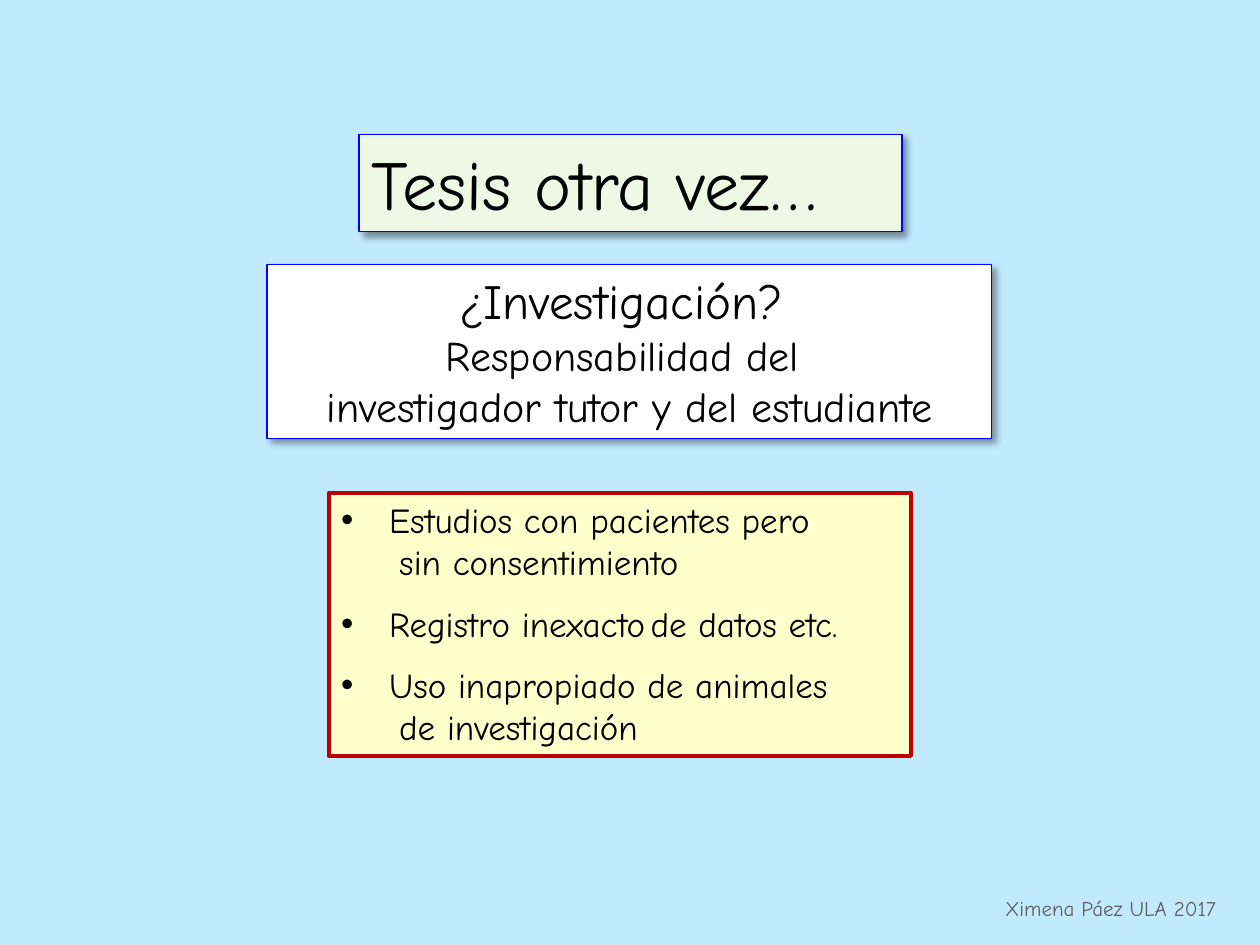
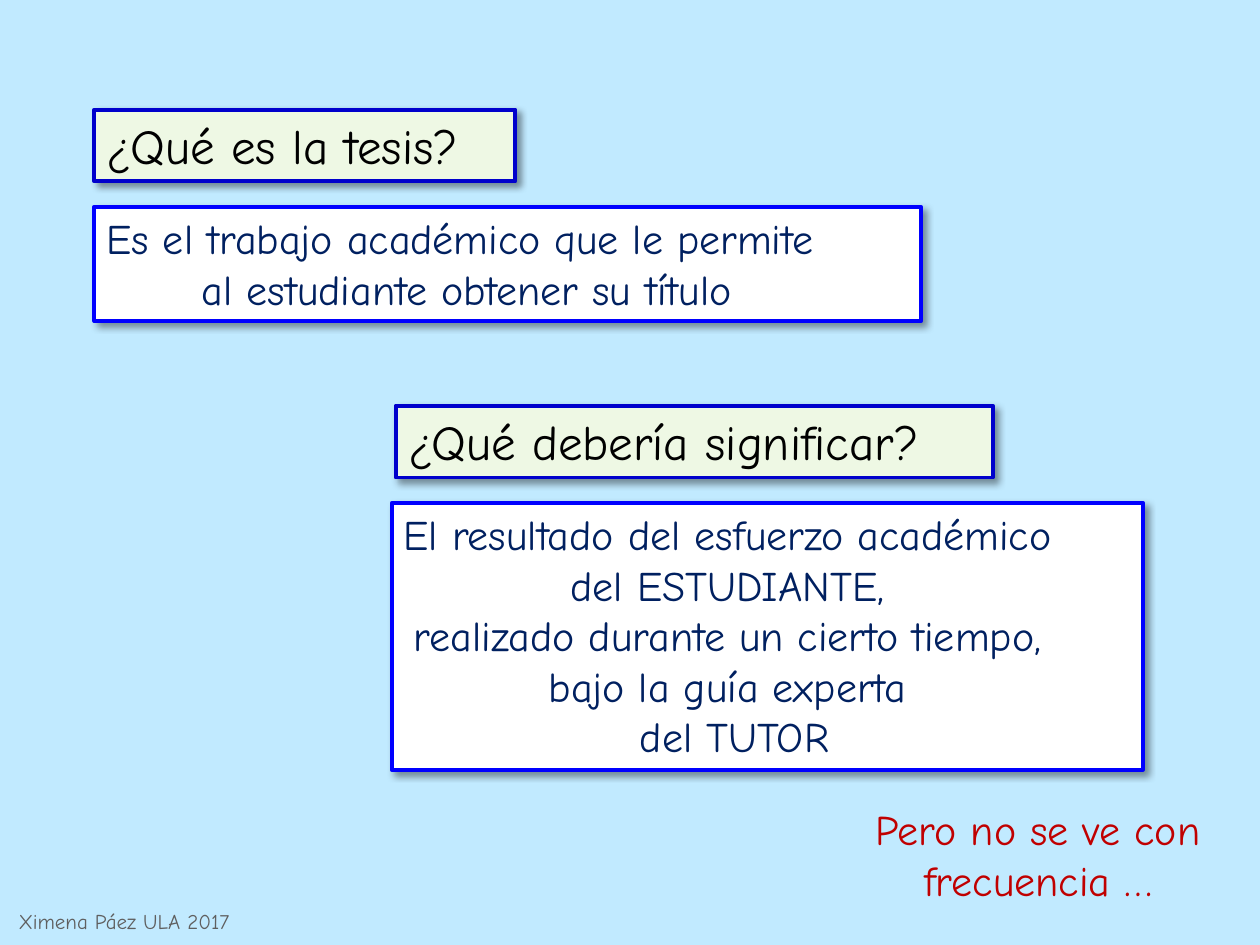
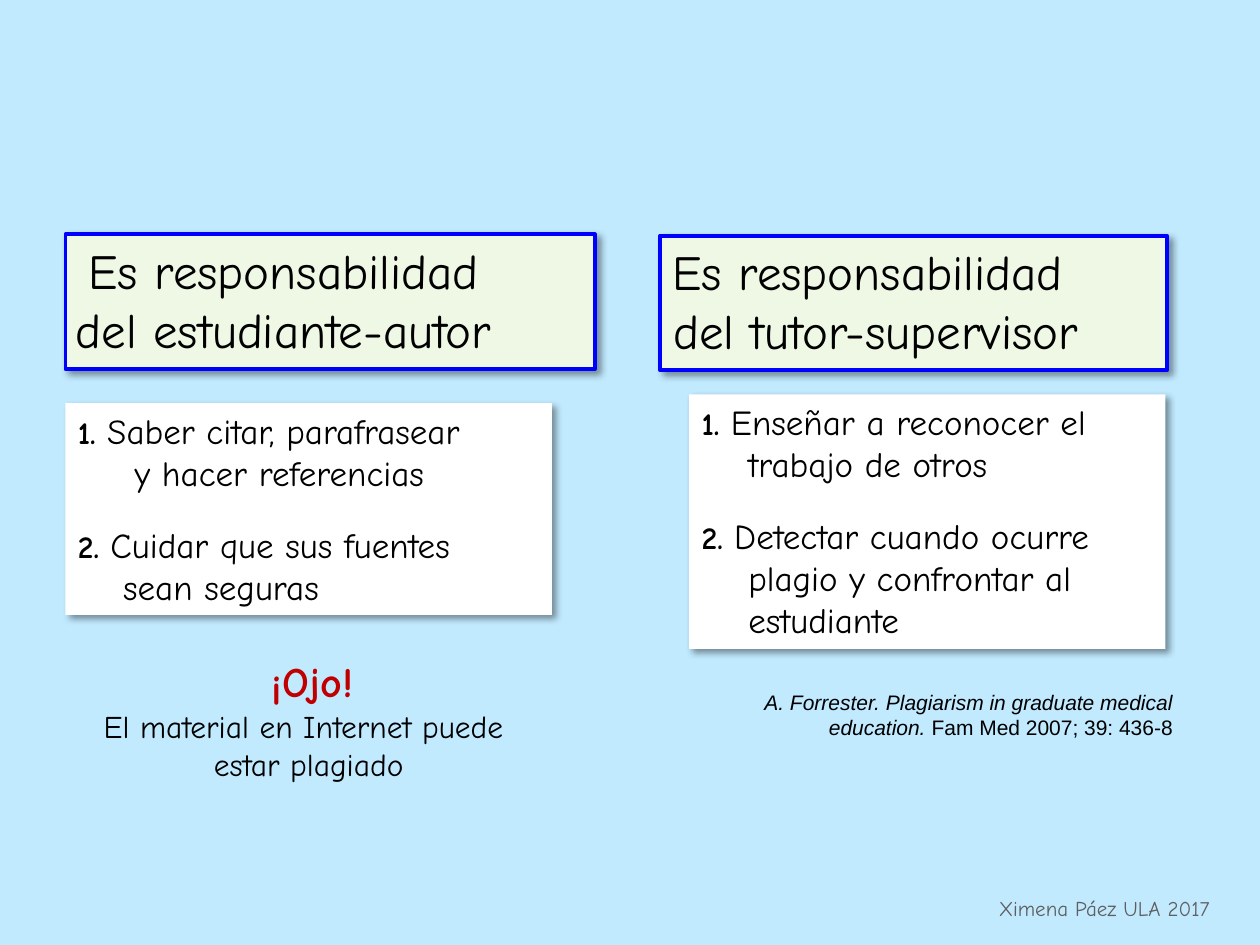
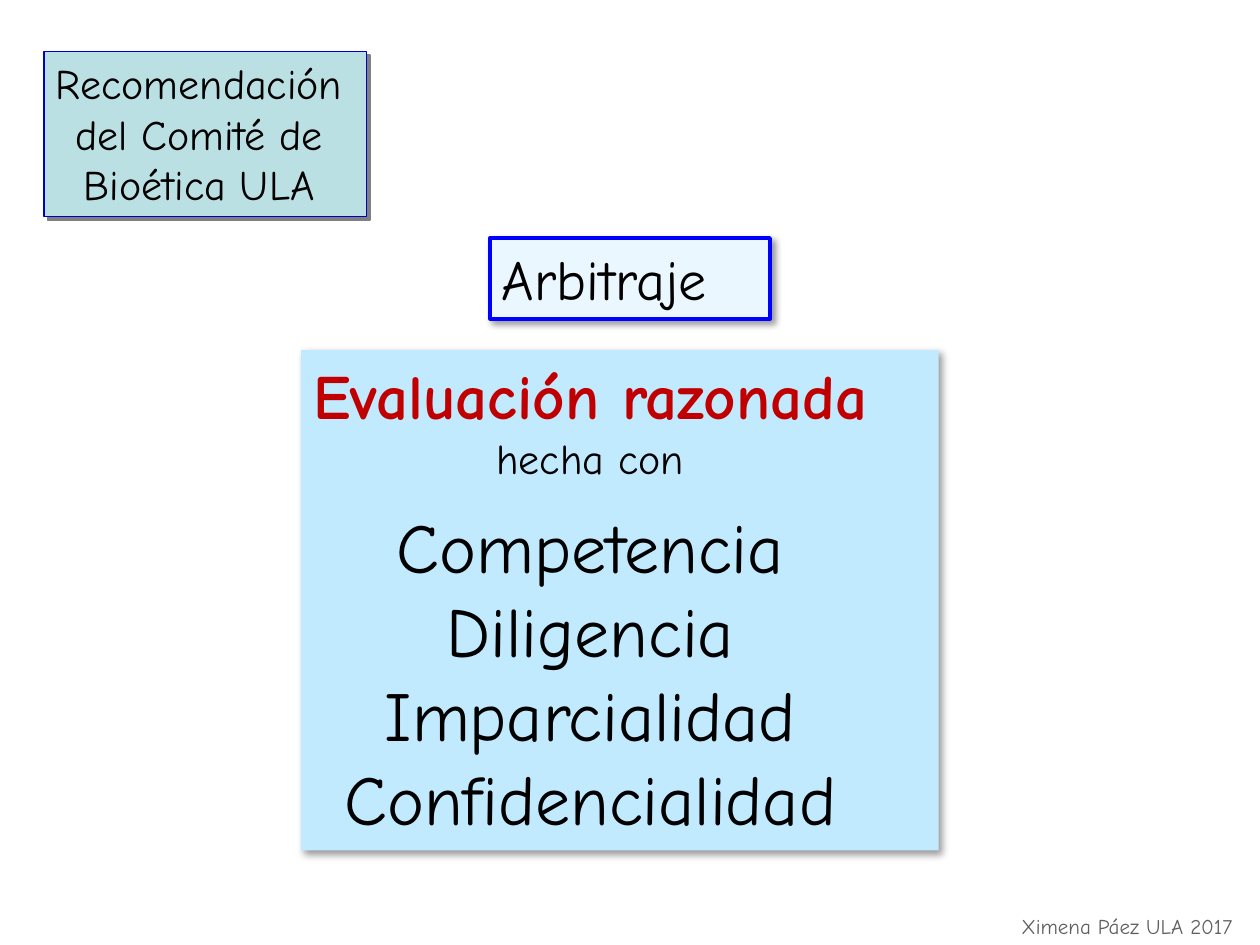
from dataclasses import dataclass

from lxml.etree import SubElement
from pptx import Presentation
from pptx.dml.color import RGBColor
from pptx.enum.shapes import MSO_SHAPE
from pptx.enum.text import MSO_ANCHOR, PP_ALIGN
from pptx.oxml.ns import qn
from pptx.util import Inches, Pt


@dataclass(frozen=True)
class Theme:
    font: str = "Comic Neue"
    citation_font: str = "Arial"
    sky: str = "C1EAFF"
    white: str = "FFFFFF"
    pale_green: str = "EEF8E4"
    pale_yellow: str = "FFFFCC"
    pale_blue: str = "EBF7FF"
    teal: str = "BBE0E3"
    blue: str = "0000FF"
    deep_blue: str = "0000CC"
    navy: str = "002060"
    red: str = "C00000"
    black: str = "000000"
    gray: str = "5F5F5F"
    thin: float = 0.75
    thick: float = 2.25
    footer_size: int = 12
    small: int = 18
    item: int = 20
    body: int = 24
    heading: int = 28
    label: int = 32
    emphasis: int = 36
    title: int = 40
    # colour, opacity %, blur pt, distance pt
    soft_shadow: tuple = ("000000", 40, 4, 3)
    hard_shadow: tuple = ("808080", 100, 0, 2.8)


THEME = Theme()
LEFT, CENTER, RIGHT = PP_ALIGN.LEFT, PP_ALIGN.CENTER, PP_ALIGN.RIGHT
INSET = 0.1
SLACK = 0.05


@dataclass
class Span:
    text: str
    size: float = THEME.body
    color: str = THEME.black
    bold: bool = False
    italic: bool = False
    font: str = THEME.font


@dataclass
class Para:
    spans: list
    indent: float = 0
    before: float = 0
    bullet: bool = False


def add_box(page, at, paras, align=CENTER, fill=None, line=None,
            weight=THEME.thick, shadow=THEME.soft_shadow, text_width=None):
    """Add a text box, or a rectangle when a fill is given.

    text_width limits the text to a column that starts at the left inset.
    """
    place = [Inches(length) for length in at]
    if fill:
        box = page.shapes.add_shape(MSO_SHAPE.RECTANGLE, *place)
        box.fill.solid()
        box.fill.fore_color.rgb = RGBColor.from_string(fill)
        if line:
            box.line.color.rgb = RGBColor.from_string(line)
            box.line.width = Pt(weight)
        else:
            box.line.fill.background()
        box.shadow.inherit = False
        if shadow:
            color, opacity, blur, distance = shadow
            effects = box._element.spPr.find(qn("a:effectLst"))
            outer = SubElement(effects, qn("a:outerShdw"), blurRad=str(Pt(blur)),
                               dist=str(Pt(distance)), dir="2700000",
                               algn="tl", rotWithShape="0")
            tint = SubElement(outer, qn("a:srgbClr"), val=color)
            SubElement(tint, qn("a:alpha"), val=str(opacity * 1000))
    else:
        box = page.shapes.add_textbox(*place)

    frame = box.text_frame
    frame.word_wrap = True
    frame.vertical_anchor = MSO_ANCHOR.TOP
    if text_width:
        frame.margin_left = Inches(INSET - SLACK)
        frame.margin_right = Inches(at[2] - INSET - text_width - SLACK)
    for index, para in enumerate(paras):
        paragraph = frame.add_paragraph() if index else frame.paragraphs[0]
        paragraph.alignment = align
        if para.before:
            paragraph.space_before = Pt(para.before)
        properties = paragraph._p.get_or_add_pPr()
        if para.indent:
            properties.set("marL", str(Inches(para.indent)))
        if para.bullet:
            properties.set("indent", str(-Inches(para.indent)))
            SubElement(properties, qn("a:buFont"), typeface=THEME.citation_font)
            SubElement(properties, qn("a:buChar"), char="•")
        for span in para.spans:
            run = paragraph.add_run()
            run.text = span.text
            run.font.name = span.font
            run.font.size = Pt(span.size)
            run.font.bold = span.bold
            run.font.italic = span.italic
            run.font.color.rgb = RGBColor.from_string(span.color)


def plain(lines, size=THEME.body, color=THEME.black):
    """Turn lines of text into paragraphs of one style."""
    return [Para([Span(text, size, color)]) for text in lines]


deck = Presentation()
deck.slide_width, deck.slide_height = Inches(10), Inches(7.5)

backgrounds = [THEME.sky, THEME.sky, THEME.sky, THEME.white]
footer_corners = [(7.88, 7.06), (0.05, 7.16), (7.83, 7.06), (8.01, 7.2)]
pages = []
for background, corner in zip(backgrounds, footer_corners):
    page = deck.slides.add_slide(deck.slide_layouts[6])
    page.background.fill.solid()
    page.background.fill.fore_color.rgb = RGBColor.from_string(background)
    add_box(page, (*corner, 2, 0.3),
            plain(["Ximena Páez ULA 2017"], THEME.footer_size, THEME.gray),
            text_width=1.67)
    pages.append(page)
thesis_page, meaning_page, duties_page, review_page = pages

# Slide 1: thesis and responsibility
faults = [
    ("Estudios con pacientes pero", "sin consentimiento"),
    ("Registro inexacto| |de datos etc.", None),
    ("Uso inapropiado de animales", "de investigación"),
]
fault_paras = []
for number, (first, second) in enumerate(faults):
    spans = [Span(part, 9 if part == " " else THEME.item) for part in first.split("|")]
    fault_paras.append(Para(spans, 0.38, 11 if number else 0, bullet=True))
    if second:
        fault_paras.append(Para([Span(second, THEME.item)], 0.46))
add_box(thesis_page, (2.61, 3.91, 4.62, 2.09), fault_paras, LEFT,
        THEME.pale_yellow, THEME.red, shadow=None)
add_box(thesis_page, (2.12, 2.1, 5.75, 1.38),
        plain(["¿Investigación? "], THEME.heading)
        + plain(["Responsabilidad del ", "investigador tutor y del estudiante"]),
        fill=THEME.white, line=THEME.blue, weight=THEME.thin)
add_box(thesis_page, (2.85, 1.07, 4.31, 0.77),
        plain(["Tesis otra vez…"], THEME.title), fill=THEME.pale_green,
        line=THEME.blue, weight=THEME.thin, text_width=3.53)

# Slide 2: questions with their answers
questions = [
    ("¿Qué es la tesis?", (0.75, 0.87, 3.34, 0.57),
     ["Es el trabajo académico que le permite ", "al estudiante obtener su título"],
     (0.75, 1.64, 6.56, 0.91), 5.71),
    ("¿Qué debería significar?", (3.14, 3.22, 4.74, 0.57),
     ["El resultado del esfuerzo académico ", "del ESTUDIANTE, ",
      "realizado durante un cierto tiempo, ", "bajo la guía experta ", "del TUTOR"],
     (3.11, 3.99, 5.96, 2.12), 5.24),
]
for question, question_at, answer, answer_at, answer_width in questions:
    add_box(meaning_page, question_at, plain([question], THEME.heading), LEFT,
            THEME.pale_green, THEME.deep_blue)
    add_box(meaning_page, answer_at, plain(answer, color=THEME.navy),
            fill=THEME.white, line=THEME.blue, text_width=answer_width)
add_box(meaning_page, (6.81, 6.33, 2.86, 0.91),
        plain(["Pero no se ve con frecuencia …"], color=THEME.red))

# Slide 3: duties of student and tutor
duties = [
    (["Es responsabilidad ", "del estudiante-autor "], (0.52, 1.86, 4.2, 1.07), 3.39,
     [("Saber citar, parafrasear", ["y hacer referencias"], 0.45),
      ("Cuidar que sus fuentes", ["sean seguras"], 0.36)], (0.52, 3.2, 3.86, 1.68)),
    (["Es responsabilidad ", "del tutor-supervisor"], (5.24, 1.87, 4.02, 1.07), 3.22,
     [("Enseñar a reconocer el", ["trabajo de otros"], 0.37),
      ("Detectar cuando ocurre", ["plagio y confrontar al", "estudiante"], 0.37)],
     (5.47, 3.13, 3.78, 2.02)),
]
for heading, heading_at, heading_width, items, items_at in duties:
    add_box(duties_page, heading_at, plain(heading, THEME.heading),
            fill=THEME.pale_green, line=THEME.blue, text_width=heading_width)
    item_paras = []
    for number, (first, others, indent) in enumerate(items, start=1):
        item_paras.append(Para([Span(f"{number}. ", THEME.small, bold=True),
                                Span(first, THEME.item)],
                               before=17 if number > 1 else 0))
        item_paras += [Para([Span(text, THEME.item)], indent) for text in others]
    add_box(duties_page, items_at, item_paras, LEFT, THEME.white)
add_box(duties_page, (2.01, 5.15, 0.94, 0.5),
        [Para([Span("¡Ojo!", color=THEME.red, bold=True)])])
add_box(duties_page, (0.72, 5.56, 3.78, 0.71),
        plain(["El material en Internet puede ", "estar plagiado"], THEME.small),
        text_width=3.26)
citation = [("A. Forrester. Plagiarism in graduate medical education. ", True),
            ("Fam Med 2007; 39: 436-8", False)]
add_box(duties_page, (5.55, 5.42, 3.86, 0.5),
        [Para([Span(text, THEME.footer_size, italic=italic, font=THEME.citation_font)
               for text, italic in citation])], RIGHT)

# Slide 4: peer review
add_box(review_page, (3.89, 1.89, 2.22, 0.64), plain(["Arbitraje"], THEME.label),
        fill=THEME.pale_blue, line=THEME.blue, text_width=1.61)
qualities = plain(["Competencia", "Diligencia", "Imparcialidad", "Confidencialidad"],
                  THEME.title)
qualities[0].before = 12
add_box(review_page, (2.39, 2.78, 5.06, 3.97),
        [Para([Span("Evaluación razonada", THEME.emphasis, THEME.red, bold=True)])]
        + plain(["hecha con"]) + qualities,
        fill=THEME.sky, text_width=4.39)
add_box(review_page, (0.35, 0.41, 2.56, 1.31),
        plain(["Recomendación", "del Comité de", "Bioética ULA"]),
        fill=THEME.teal, line=THEME.deep_blue, weight=THEME.thin,
        shadow=THEME.hard_shadow, text_width=2.26)

deck.save("out.pptx")
